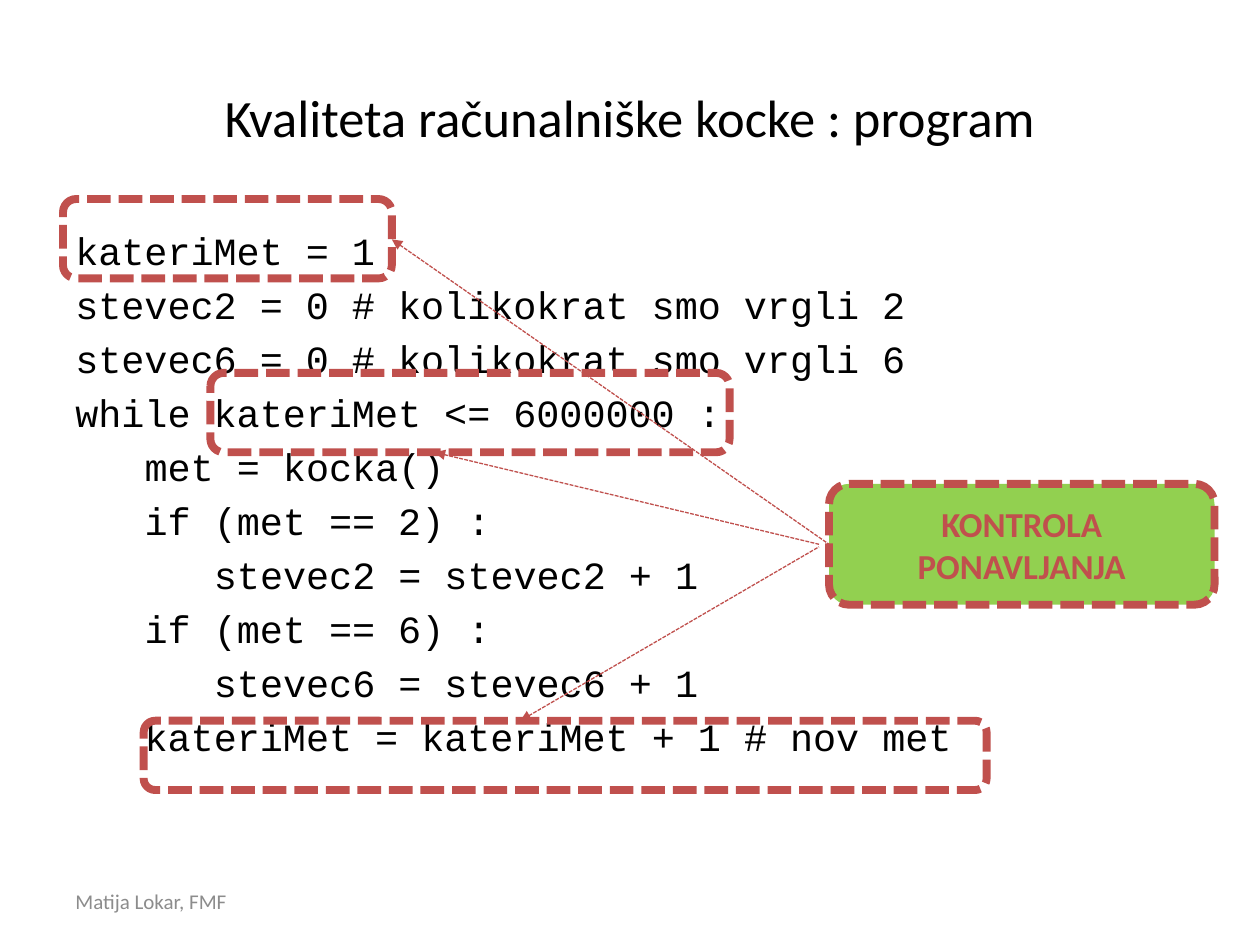
"""Build a slide of a dice program with its loop control highlighted."""
import lxml.etree
import pptx
import pptx.dml.color
import pptx.enum.dml
import pptx.enum.shapes
import pptx.enum.text
import pptx.oxml.ns
import pptx.util

Inches = pptx.util.Inches
Pt = pptx.util.Pt
ANCHOR = pptx.enum.text.MSO_ANCHOR
ALIGN = pptx.enum.text.PP_ALIGN
COLORS = {"text": "000000", "footer": "8C8C8C", "accent": "C0504D", "callout": "92D050"}


def write(shape, lines, size, color, font="Calibri", anchor=ANCHOR.MIDDLE,
          align=ALIGN.LEFT, bold=False, space=0):
    frame = shape.text_frame
    frame.word_wrap = True
    frame.vertical_anchor = anchor
    for index, (level, text) in enumerate(lines):
        paragraph = frame.add_paragraph() if index else frame.paragraphs[0]
        paragraph.alignment = align
        paragraph.space_before = Pt(space)
        if level:
            paragraph._p.get_or_add_pPr().set("marL", str(Inches(0.55 * level)))
        run = paragraph.add_run()
        run.text = text
        run.font.name = font
        run.font.size = Pt(size)
        run.font.bold = bold
        run.font.color.rgb = pptx.dml.color.RGBColor.from_string(COLORS[color])


def style_line(line, width):
    line.color.rgb = pptx.dml.color.RGBColor.from_string(COLORS["accent"])
    line.width = Pt(width)
    line.dash_style = pptx.enum.dml.MSO_LINE.SQUARE_DOT


presentation = pptx.Presentation()
presentation.slide_width = Inches(10)
presentation.slide_height = Inches(7.5)
slide = presentation.slides.add_slide(presentation.slide_layouts[6])

title = slide.shapes.add_textbox(Inches(0.5), Inches(0.3), Inches(9), Inches(1.25))
write(title, [(0, "Kvaliteta računalniške kocke : program")], 30, "text", align=ALIGN.CENTER)

program = [
    (0, "kateriMet = 1"),
    (0, "stevec2 = 0 # kolikokrat smo vrgli 2"),
    (0, "stevec6 = 0 # kolikokrat smo vrgli 6"),
    (0, "while kateriMet <= 6000000 :"),
    (1, "met = kocka()"),
    (1, "if (met == 2) :"),
    (2, "stevec2 = stevec2 + 1"),
    (1, "if (met == 6) :"),
    (2, "stevec6 = stevec6 + 1"),
    (1, "kateriMet = kateriMet + 1 # nov met"),
]
code = slide.shapes.add_textbox(Inches(0.5), Inches(1.75), Inches(9), Inches(4.95))
write(code, program, 22, "text", font="Courier New", anchor=ANCHOR.TOP, space=4.5)

footer = slide.shapes.add_textbox(Inches(0.5), Inches(6.95), Inches(2.33), Inches(0.4))
write(footer, [(0, "Matija Lokar, FMF")], 12, "footer")

boxes = [
    (1.14, 5.72, 6.69, 0.55, ""),
    (1.67, 2.96, 4.12, 0.63, ""),
    (0.5, 1.58, 2.61, 0.63, ""),
    (6.58, 3.84, 3.06, 0.96, "KONTROLA PONAVLJANJA"),
]
for left, top, width, height, label in boxes:
    box = slide.shapes.add_shape(
        pptx.enum.shapes.MSO_SHAPE.ROUNDED_RECTANGLE,
        Inches(left), Inches(top), Inches(width), Inches(height))
    box.shadow.inherit = False
    style_line(box.line, 4.5)
    if label:
        box.fill.solid()
        box.fill.fore_color.rgb = pptx.dml.color.RGBColor.from_string(COLORS["callout"])
        write(box, [(0, label)], 20, "accent", align=ALIGN.CENTER, bold=True)
    else:
        box.fill.background()

arrows = [
    (3.11, 1.9, 6.58, 4.32),
    (3.45, 3.59, 6.5, 4.32),
    (4.13, 5.72, 6.5, 4.34),
]
for ends in arrows:
    arrow = slide.shapes.add_connector(
        pptx.enum.shapes.MSO_CONNECTOR.STRAIGHT, *[Inches(value) for value in ends])
    style_line(arrow.line, 0.75)
    head = lxml.etree.SubElement(arrow.line._get_or_add_ln(), pptx.oxml.ns.qn("a:headEnd"))
    head.set("type", "triangle")
    lxml.etree.SubElement(arrow._element.spPr, pptx.oxml.ns.qn("a:effectLst"))

presentation.save("out.pptx")
